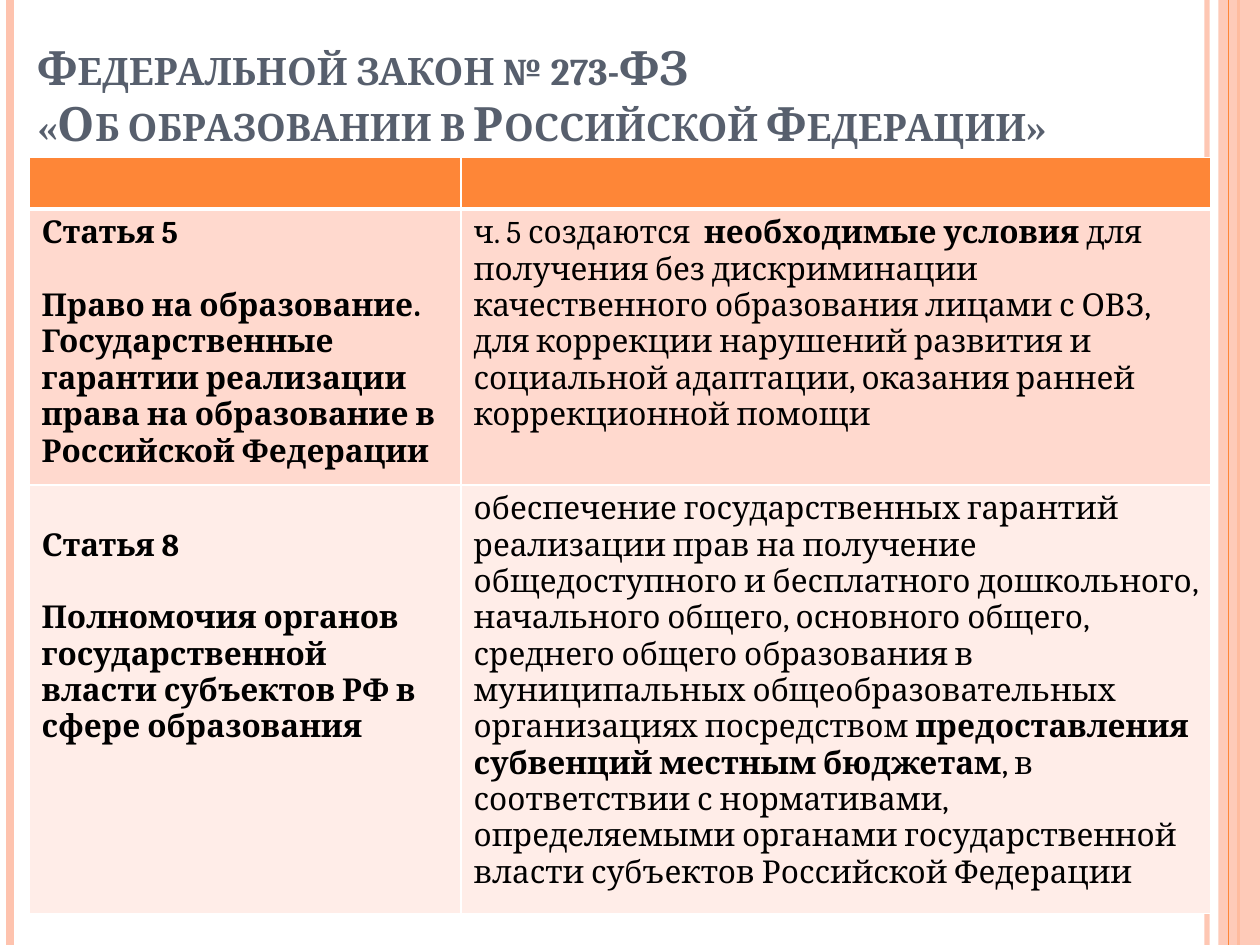
import pptx
import pptx.util
import pptx.dml.color
import pptx.enum.shapes
import pptx.enum.text
import pptx.oxml.ns
from lxml import etree

Inches = pptx.util.Inches
Pt = pptx.util.Pt
RGBColor = pptx.dml.color.RGBColor
qn = pptx.oxml.ns.qn

ORANGE = RGBColor(0xFE, 0x86, 0x37)
PEACH = RGBColor(0xFE, 0xC3, 0xAE)
SLATE = RGBColor(0x57, 0x5F, 0x6D)
BLACK = RGBColor(0, 0, 0)
ROW_FILLS = [ORANGE, RGBColor(0xFF, 0xD9, 0xCE), RGBColor(0xFF, 0xED, 0xE8)]
FONT = "Cambria"
TEXT_LINE = Pt(20.8)


def add_span(para, text, size, color, bold):
    span = para.add_run()
    span.text = text
    span.font.name = FONT
    span.font.size = Pt(size)
    span.font.bold = bold
    span.font.color.rgb = color
    return span


def set_alpha(fill_parent, percent):
    """Make the solid fill inside an element partly transparent."""
    color = fill_parent.find(".//" + qn("a:srgbClr"))
    etree.SubElement(color, qn("a:alpha"), val=str(percent * 1000))


deck = pptx.Presentation()
deck.slide_width = Inches(10)
deck.slide_height = Inches(7.5)
page = deck.slides.add_slide(deck.slide_layouts[6])

# Side stripes: x, colour, width, opacity
stripes = [
    (9.58, PEACH, 3, 93),
    (0.08, PEACH, 4.5, 100),
    (9.83, ORANGE, 1.5, 100),
    (9.75, ORANGE, 0.75, 100),
]
for x, color, width, opacity in stripes:
    stripe = page.shapes.add_connector(
        pptx.enum.shapes.MSO_CONNECTOR.STRAIGHT,
        Inches(x), Inches(0), Inches(x), Inches(7.5))
    stripe.line.color.rgb = color
    stripe.line.width = Pt(width)
    properties = stripe._element.spPr
    if opacity < 100:
        set_alpha(properties, opacity)
    etree.SubElement(properties, qn("a:effectLst"))
    if x == 9.83:
        band = page.shapes.add_shape(
            pptx.enum.shapes.MSO_SHAPE.RECTANGLE,
            Inches(9.67), Inches(0), Inches(0.33), Inches(7.5))
        band.shadow.inherit = False
        band.fill.solid()
        band.fill.fore_color.rgb = PEACH
        set_alpha(band._element.spPr, 87)
        band.line.fill.background()

# Title
title = page.shapes.add_textbox(Inches(0.2), Inches(0.3), Inches(9.61), Inches(0.95))
title.text_frame.word_wrap = True
title.text_frame.vertical_anchor = pptx.enum.text.MSO_ANCHOR.BOTTOM
para = title.text_frame.paragraphs[0]
title_lines = ["Федеральной закон № 273-ФЗ", "«Об образовании в Российской Федерации»"]
for index, text in enumerate(title_lines):
    if index:
        para.add_line_break()
    span = add_span(para, text, 27, SLATE, True)
    span.font._element.set("cap", "small")

# Table of articles: each cell holds paragraphs, each paragraph (text, bold) runs
rows = [
    [[], []],
    [
        [[("Статья 5", True)],
         [("Право на образование. Государственные гарантии реализации права "
           "на образование в Российской Федерации", True)]],
        [[("ч. 5 создаются  ", False),
          ("необходимые условия ", True),
          ("для получения без дискриминации качественного образования лицами с ОВЗ, "
           "для коррекции нарушений развития и социальной адаптации, оказания ранней "
           "коррекционной помощи", False)]],
    ],
    [
        [[("Статья 8", True)],
         [("Полномочия органов государственной власти субъектов РФ "
           "в сфере образования", True)]],
        [[("обеспечение государственных гарантий реализации прав на получение "
           "общедоступного и бесплатного дошкольного, начального общего, основного "
           "общего, среднего общего образования в муниципальных общеобразовательных "
           "организациях посредством ", False),
          ("предоставления субвенций местным бюджетам", True),
          (", в соответствии с нормативами, определяемыми органами государственной "
           "власти субъектов Российской Федерации", False)]],
    ],
]
table = page.shapes.add_table(
    3, 2, Inches(0.23), Inches(1.25), Inches(9.38), Inches(5.8)).table
for column, width in zip(table.columns, [3.43, 5.95]):
    column.width = Inches(width)
for row, height in zip(table.rows, [0.41, 2.12, 3.27]):
    row.height = Inches(height)

for row_index, row in enumerate(rows):
    for column_index, paragraphs in enumerate(row):
        cell = table.cell(row_index, column_index)
        properties = cell._tc.get_or_add_tcPr()
        for side in "LRTB":
            header_edge = (row_index, side) in [(0, "B"), (1, "T")]
            border = etree.SubElement(
                properties, qn("a:ln" + side), w=str(Pt(3 if header_edge else 1)))
            paint = etree.SubElement(border, qn("a:solidFill"))
            etree.SubElement(paint, qn("a:srgbClr"), val="FFFFFF")
        cell.fill.solid()
        cell.fill.fore_color.rgb = ROW_FILLS[row_index]
        for index, runs in enumerate(paragraphs):
            if index:
                para = cell.text_frame.add_paragraph()
                para.space_before = TEXT_LINE
            else:
                para = cell.text_frame.paragraphs[0]
            for text, bold in runs:
                add_span(para, text, 18, BLACK, bold)

# The last article starts one line lower than its description
table.cell(2, 0).margin_top = Inches(0.05) + TEXT_LINE

deck.save("out.pptx")
